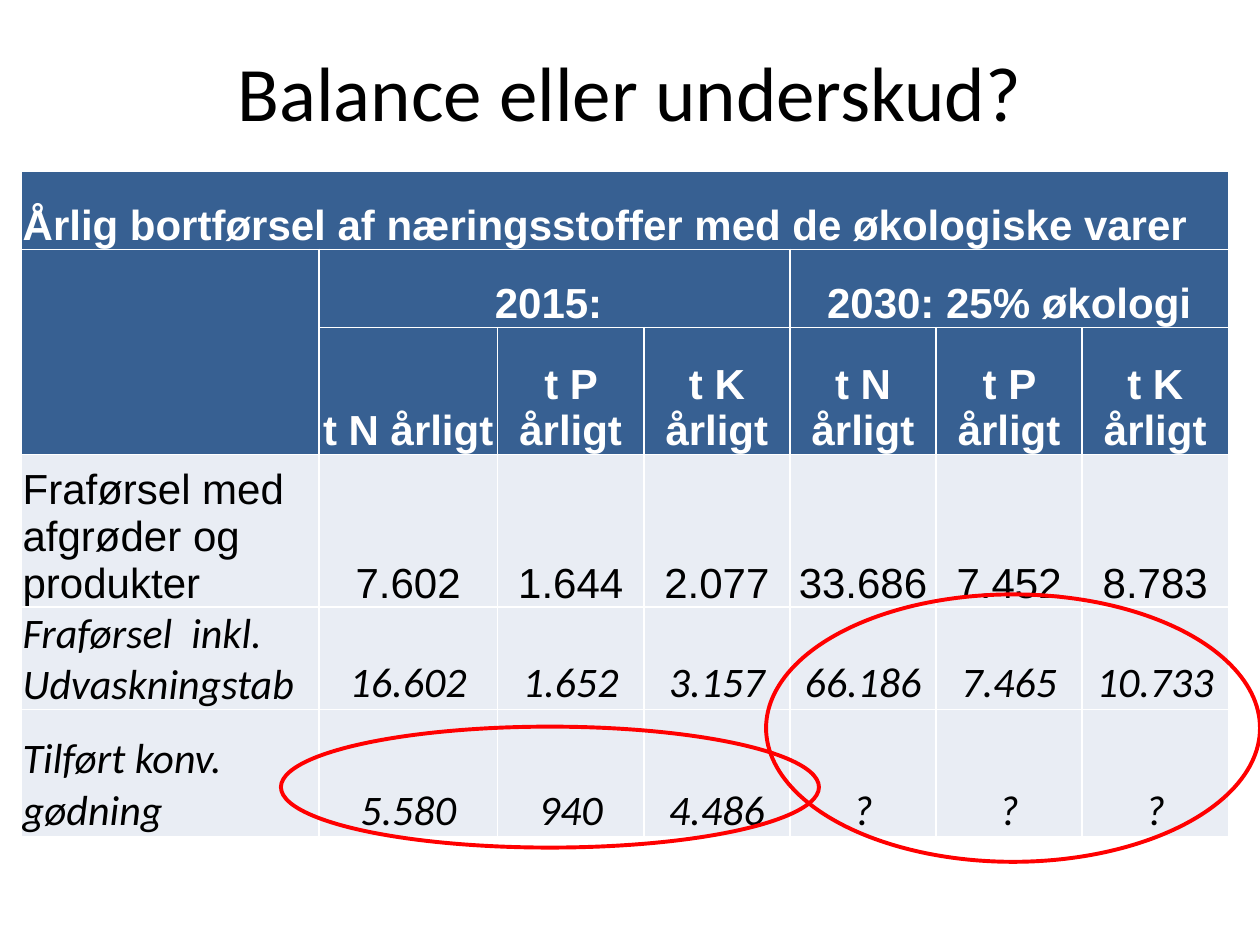
from dataclasses import dataclass

from lxml import etree
from pptx import Presentation
from pptx import util as u
from pptx.dml.color import RGBColor
from pptx.enum import shapes, text
from pptx.oxml import ns

SLIDE_W, SLIDE_H = u.Inches(10), u.Inches(7.5)


@dataclass(frozen=True)
class Theme:
    ink: str = "000000"
    white: str = "FFFFFF"
    header: str = "376092"
    body: str = "E9EDF4"
    mark: str = "FF0000"
    title_font: str = "Calibri"
    table_font: str = "Arial"
    title_size: int = 44
    table_size: int = 24
    border: float = 1
    mark_line: float = 2.25


THEME = Theme()
LEFT, CENTER = text.PP_ALIGN.LEFT, text.PP_ALIGN.CENTER

# Table grid in inches: one label column, then N, P, K for each year
COLUMNS = [2.36, 1.42] + [1.16] * 5
ROWS = [0.62, 0.62, 1.01, 0.97, 0.76, 1.01]
NUTRIENTS = [f"t {nutrient} årligt" for nutrient in "NPK"]
CONTENT = [
    ["Årlig bortførsel af næringsstoffer med de økologiske varer"] + [""] * 6,
    ["", "2015: ", "", "", "2030: 25% økologi", "", ""],
    [""] + NUTRIENTS * 2,
    ["Fraførsel med afgrøder og produkter",
     "7.602", "1.644", "2.077", "33.686", "7.452", "8.783"],
    ["Fraførsel  inkl. Udvaskningstab",
     "16.602", "1.652", "3.157", "66.186", "7.465", "10.733"],
    ["Tilført konv. gødning", "5.580", "940", "4.486", "?", "?", "?"],
]
# First and last cell of each merged area, as (row, column)
MERGES = [((0, 0), (0, 6)), ((1, 0), (2, 0)), ((1, 1), (1, 3)), ((1, 4), (1, 6))]
HEADER_ROWS = 3
FIRST_ITALIC_ROW = 4


def color(value):
    return RGBColor.from_string(value)


def share(left, top, width, height):
    """Turn shares of the slide into a box."""
    return [round(part * side) for part, side in
            zip((left, top, width, height), (SLIDE_W, SLIDE_H) * 2)]


def write(frame, words, *, font, size, ink, align=LEFT, bold=False, italic=False):
    paragraph = frame.paragraphs[0]
    paragraph.alignment = align
    if words:
        paragraph.add_run().text = words
    for style in [paragraph.font] + [run.font for run in paragraph.runs]:
        style.name, style.size = font, u.Pt(size)
        style.bold, style.italic = bold, italic
        style.color.rgb = color(ink)


def add_title(slide, words):
    title = slide.shapes.add_textbox(*share(0.05, 0.04, 0.9, 0.112)).text_frame
    title.word_wrap = True
    title.vertical_anchor = text.MSO_ANCHOR.MIDDLE
    write(title, words, font=THEME.title_font, size=THEME.title_size,
          ink=THEME.ink, align=CENTER)


def add_borders(cell):
    properties = cell._tc.get_or_add_tcPr()
    for side in ("lnL", "lnR", "lnT", "lnB"):
        line = etree.SubElement(properties, ns.qn(f"a:{side}"),
                                w=str(u.Pt(THEME.border)))
        fill = etree.SubElement(line, ns.qn("a:solidFill"))
        etree.SubElement(fill, ns.qn("a:srgbClr"), val=THEME.white)


def format_cell(cell, words, row, column):
    is_header = row < HEADER_ROWS
    is_italic = row >= FIRST_ITALIC_ROW
    add_borders(cell)
    cell.fill.solid()
    cell.fill.fore_color.rgb = color(THEME.header if is_header else THEME.body)
    cell.margin_left = cell.margin_right = cell.margin_top = u.Inches(0.01)
    cell.margin_bottom = 0
    cell.vertical_anchor = text.MSO_ANCHOR.BOTTOM
    write(cell.text_frame, words,
          font=THEME.title_font if is_italic else THEME.table_font,
          size=THEME.table_size,
          ink=THEME.white if is_header else THEME.ink,
          align=CENTER if column else LEFT,
          bold=is_header, italic=is_italic)


def add_nutrient_table(slide):
    balance = slide.shapes.add_table(
        len(ROWS), len(COLUMNS), u.Inches(0.17), u.Inches(1.36),
        u.Inches(sum(COLUMNS)), u.Inches(sum(ROWS))).table
    for column, width in zip(balance.columns, COLUMNS):
        column.width = u.Inches(width)
    for row, height in zip(balance.rows, ROWS):
        row.height = u.Inches(height)
    for r, entries in enumerate(CONTENT):
        for c, words in enumerate(entries):
            format_cell(balance.cell(r, c), words, r, c)
    for first, last in MERGES:
        balance.cell(*first).merge(balance.cell(*last))


def add_ring(slide, *box):
    ring = slide.shapes.add_shape(shapes.MSO_SHAPE.OVAL, *share(*box))
    ring.shadow.inherit = False
    ring.fill.background()
    ring.line.color.rgb = color(THEME.mark)
    ring.line.width = u.Pt(THEME.mark_line)


def main():
    deck = Presentation()
    deck.slide_width, deck.slide_height = SLIDE_W, SLIDE_H
    slide = deck.slides.add_slide(deck.slide_layouts[6])

    add_title(slide, "Balance eller underskud?")
    add_nutrient_table(slide)

    # Rings around the 2015 supply and the 2030 demand
    add_ring(slide, 0.223, 0.769, 0.427, 0.128)
    add_ring(slide, 0.608, 0.629, 0.392, 0.283)

    deck.save("out.pptx")


if __name__ == "__main__":
    main()
